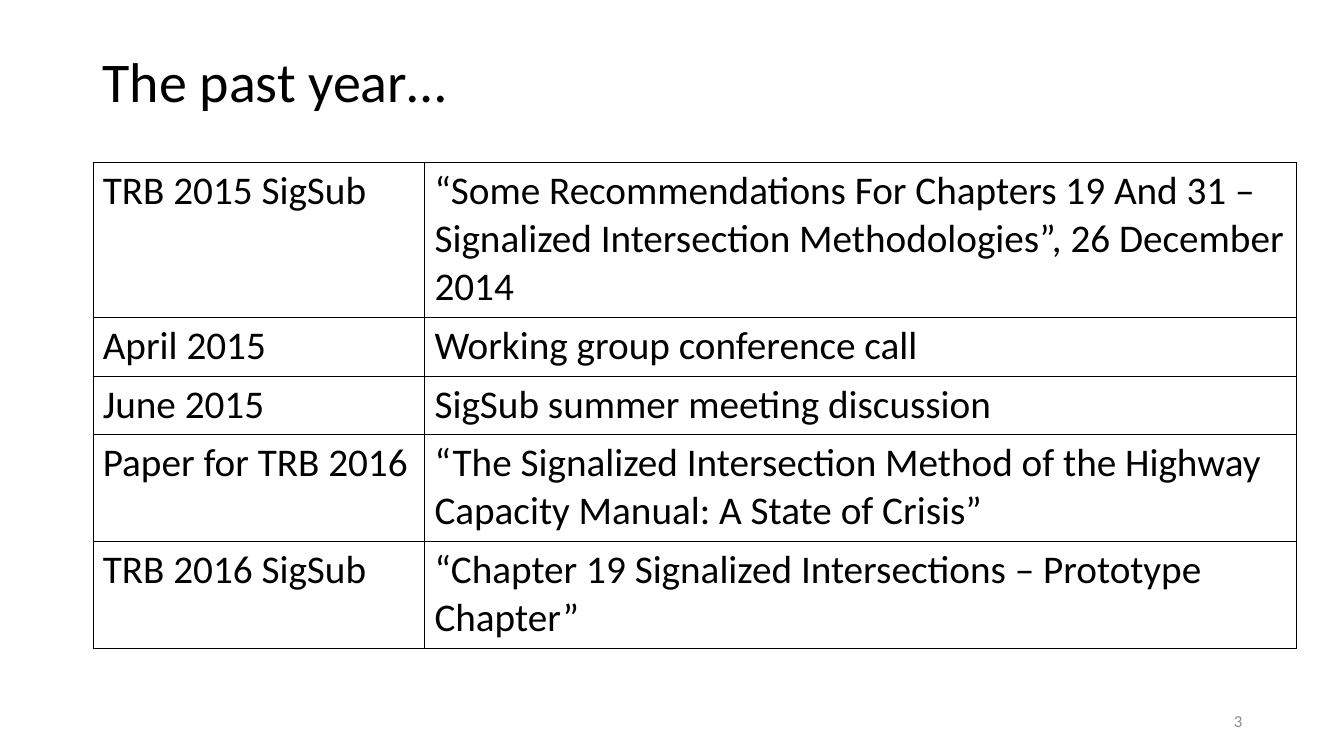
from pptx import Presentation
from pptx.dml.color import RGBColor
from pptx.enum.text import MSO_ANCHOR, PP_ALIGN
from pptx.oxml import parse_xml
from pptx.oxml.ns import nsdecls
from pptx.util import Inches, Pt

MIDDLE = MSO_ANCHOR.MIDDLE
LEFT, RIGHT = PP_ALIGN.LEFT, PP_ALIGN.RIGHT

# Content
FONT, BLACK, GREY = "Calibri", "000000", "8C8C8C"
TITLE = "The past year…"
PAGE_NUMBER = "3"
EVENTS = [  # when, what, lines of text
    ("TRB 2015 SigSub", "“Some Recommendations For Chapters 19 And 31 – "
     "Signalized Intersection Methodologies”, 26 December 2014", 3),
    ("April 2015", "Working group conference call", 1),
    ("June 2015", "SigSub summer meeting discussion", 1),
    ("Paper for TRB 2016", "“The Signalized Intersection Method of the Highway "
     "Capacity Manual: A State of Crisis”", 2),
    ("TRB 2016 SigSub", "“Chapter 19 Signalized Intersections – Prototype Chapter”", 2),
]
COL_WIDTHS = (3.29, 8.65)
TABLE_LEFT, TABLE_TOP = 0.92, 1.61
LINE_HEIGHT, ROW_PADDING = 0.48, 0.1
BORDER_WIDTH = Pt(0.25)


def rgb(color):
    return RGBColor.from_string(color)


def add_run(p, text, size, color):
    r = p.add_run()
    r.text = text
    r.font.name = FONT
    r.font.size = Pt(size)
    r.font.color.rgb = rgb(color)


def add_text(slide, box, text, size, color, align=LEFT, spacing=1.0):
    tf = slide.shapes.add_textbox(*map(Inches, box)).text_frame
    tf.word_wrap = True
    tf.vertical_anchor = MIDDLE
    p = tf.paragraphs[0]
    p.alignment = align
    p.line_spacing = spacing
    add_run(p, text, size, color)


def add_borders(cell, color):
    tc_pr = cell._tc.get_or_add_tcPr()
    for i, side in enumerate(("lnL", "lnR", "lnT", "lnB")):
        tc_pr.insert(i, parse_xml(
            f'<a:{side} {nsdecls("a")} w="{BORDER_WIDTH}"><a:solidFill>'
            f'<a:srgbClr val="{color}"/></a:solidFill></a:{side}>'))


def add_events(slide):
    heights = [LINE_HEIGHT * lines + ROW_PADDING for *_, lines in EVENTS]
    box = (TABLE_LEFT, TABLE_TOP, sum(COL_WIDTHS), sum(heights))
    table = slide.shapes.add_table(len(EVENTS), len(COL_WIDTHS), *map(Inches, box)).table
    table.first_row = table.horz_banding = False
    for col, width in zip(table.columns, COL_WIDTHS):
        col.width = Inches(width)
    for row, height, (when, what, _) in zip(table.rows, heights, EVENTS):
        row.height = Inches(height)
        for cell, text in zip(row.cells, (when, what)):
            cell.fill.background()
            add_borders(cell, BLACK)
            add_run(cell.text_frame.paragraphs[0], text, 28, BLACK)


def main():
    prs = Presentation()
    prs.slide_width, prs.slide_height = Inches(13.33), Inches(7.5)
    slide = prs.slides.add_slide(prs.slide_layouts[6])

    # Title, page number and table of events
    add_text(slide, (0.92, 0.4, 11.5, 0.88), TITLE, 40, BLACK, spacing=0.9)
    add_text(slide, (9.42, 6.95, 3, 0.4), PAGE_NUMBER, 12, GREY, align=RIGHT)
    add_events(slide)

    prs.save("out.pptx")


if __name__ == "__main__":
    main()
